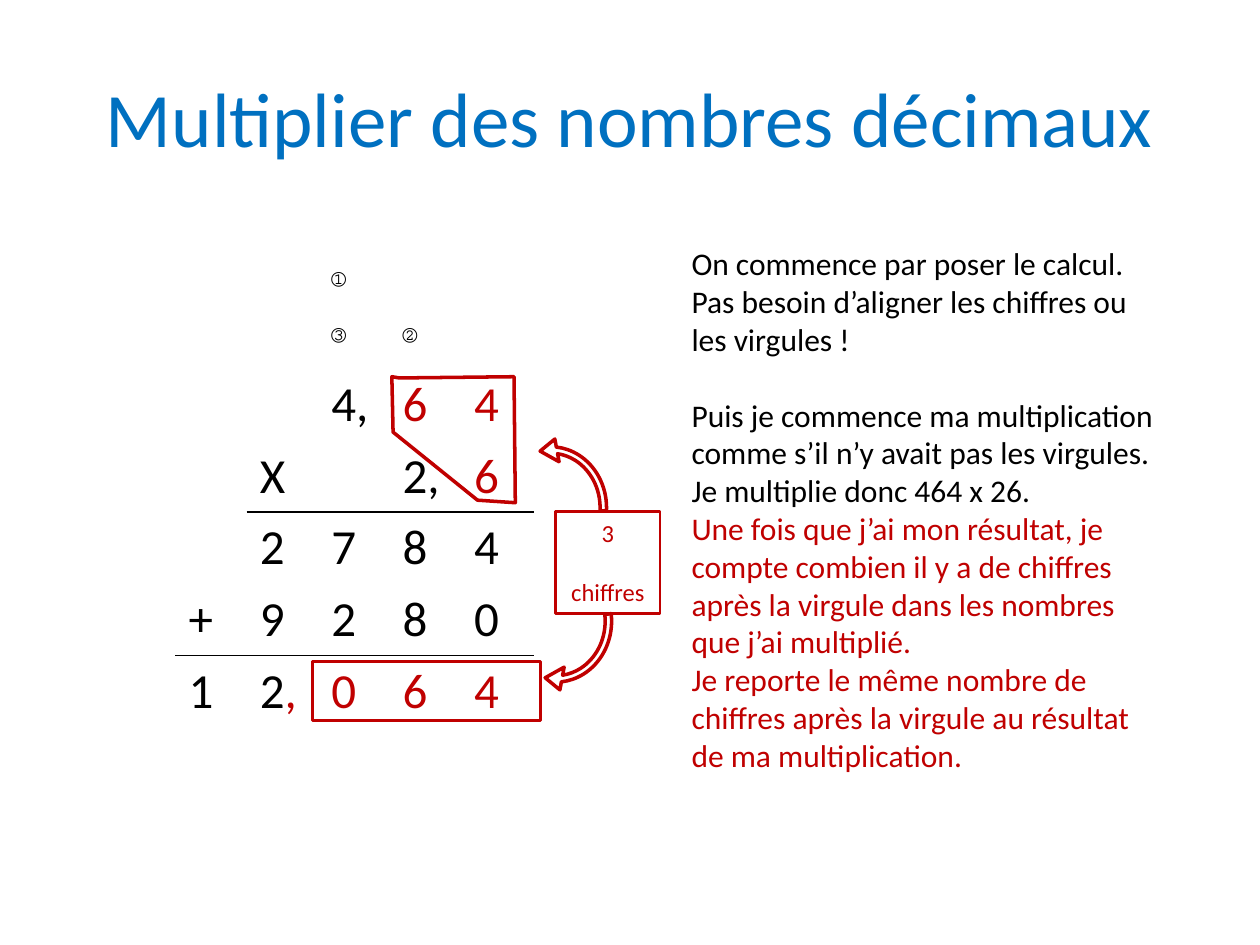
import pptx
import pptx.dml.color
import pptx.enum.shapes
import pptx.enum.text
import pptx.oxml
import pptx.oxml.ns
import pptx.util

Inches = pptx.util.Inches
Pt = pptx.util.Pt
Shape = pptx.enum.shapes.MSO_SHAPE
Align = pptx.enum.text.PP_ALIGN
Anchor = pptx.enum.text.MSO_ANCHOR

BLACK, WHITE, RED, BLUE = "000000", "FFFFFF", "C00000", "0070C0"


def tint(code):
    return pptx.dml.color.RGBColor.from_string(code)


class Deck:
    font = "Calibri"

    def __init__(self):
        self.prs = pptx.Presentation()
        self.prs.slide_width = Inches(10)
        self.prs.slide_height = Inches(7.5)
        self.slide = self.prs.slides.add_slide(self.prs.slide_layouts[5])

    def style(self, run, size, color, font=None):
        run.font.name = font or self.font
        run.font.size = Pt(size)
        run.font.bold = False
        run.font.color.rgb = tint(color)

    def title(self, text):
        box = self.slide.shapes.title
        box.left, box.top = Inches(0.5), Inches(0.3)
        box.width, box.height = Inches(9), Inches(1.25)
        box.text_frame.text = text
        self.style(box.text_frame.paragraphs[0].runs[0], 44, BLUE)

    def fill_text(self, frame, lines, size, align=None):
        """Each line is (text, colour, space before in points)."""
        frame.word_wrap = True
        frame.text = "\n".join(line[0] for line in lines)
        for para, (_, color, gap) in zip(frame.paragraphs, lines):
            para.alignment = align
            para.space_before = Pt(gap)
            self.style(para.runs[0], size, color)

    def text(self, area, lines, size):
        box = self.slide.shapes.add_textbox(*map(Inches, area))
        self.fill_text(box.text_frame, lines, size)

    def outline(self, shape, width=2):
        shape.shadow.inherit = False
        shape.fill.background()
        shape.line.color.rgb = tint(RED)
        shape.line.width = Pt(width)

    def shape(self, kind, area, width=2):
        item = self.slide.shapes.add_shape(kind, *map(Inches, area))
        self.outline(item, width)
        return item

    def arrow(self, area, start, flip=False):
        item = self.shape(Shape.CIRCULAR_ARROW, area)
        for i, val in enumerate((0.05, 10.1, 158.22, start, 0.09)):
            item.adjustments[i] = val
        item.rotation = 180
        if flip:
            item._element.spPr.xfrm.set("flipV", "1")

    def lasso(self, points):
        spots = [(Inches(x), Inches(y)) for x, y in points]
        path = self.slide.shapes.build_freeform(*spots[0])
        path.add_line_segments(spots[1:], close=True)
        self.outline(path.convert_to_shape())

    def rule(self, cell, side):
        cell._tc.get_or_add_tcPr().append(pptx.oxml.parse_xml(
            f'<a:{side} {pptx.oxml.ns.nsdecls("a")} w="12700"><a:solidFill>'
            f'<a:srgbClr val="{BLACK}"/></a:solidFill></a:{side}>'))

    def table(self, area, heights, rows, rules):
        """A bar in a cell splits black text from red; rules maps row to first column."""
        cols = len(rows[0])
        grid = self.slide.shapes.add_table(len(rows), cols, *map(Inches, area)).table
        for col in grid.columns:
            col.width = Inches(area[2] / cols)
        for r, row in enumerate(rows):
            grid.rows[r].height = Inches(heights[r])
            for c, text in enumerate(row):
                cell = grid.cell(r, c)
                if c >= rules.get(r - 1, cols):
                    self.rule(cell, "lnT")
                if c >= rules.get(r, cols):
                    self.rule(cell, "lnB")
                cell.fill.solid()
                cell.fill.fore_color.rgb = tint(WHITE)
                cell.vertical_anchor = Anchor.MIDDLE
                para = cell.text_frame.paragraphs[0]
                if not text:
                    para.font.size = Pt(10)
                black, _, red = text.partition("|")
                for part, color in ((black, BLACK), (red, RED)):
                    if part:
                        run = para.add_run()
                        run.text = part
                        if r < 2:
                            self.style(run, 14, color, "DejaVu Sans Mono")
                        else:
                            self.style(run, 28, color)


def main():
    deck = Deck()
    deck.title("Multiplier des nombres décimaux")

    # Explanation
    deck.text((5.39, 1.89, 3.94, 4.34), [
        ("On commence par poser le calcul.", BLACK, 0),
        ("Pas besoin d’aligner les chiffres ou les virgules !", BLACK, 0),
        ("Puis je commence ma multiplication comme s’il n’y avait pas les virgules.",
         BLACK, 21.6),
        ("Je multiplie donc 464 x 26.", BLACK, 0),
        ("Une fois que j’ai mon résultat, je compte combien il y a de chiffres "
         "après la virgule dans les nombres que j’ai multiplié.", RED, 0),
        ("Je reporte le même nombre de chiffres après la virgule au résultat "
         "de ma multiplication.", RED, 0),
    ], 18)

    # Long multiplication, with carries in the first two rows
    rows = [
        ["", "", "", "①", "", ""],
        ["", "", "", "③", "②", ""],
        ["", "", "", "4,", "|6", "|4"],
        ["", "", "X", "", "2,", "|6"],
        ["", "", "2", "7", "8", "4"],
        ["", "+", "9", "2", "8", "0"],
        ["", "1", "2|,", "|0", "|6", "|4"],
        [""] * 6,
        [""] * 6,
    ]
    deck.table((0.83, 2.02, 3.4, 4.87), [0.31] + [0.57] * 8, rows, {3: 2, 5: 1})

    # Decimal digits in the factors and in the result
    deck.lasso([(3.11, 2.99), (3.12, 3.43), (3.79, 3.97), (4.09, 3.99),
                (4.08, 2.99), (3.17, 3)])
    deck.shape(Shape.RECTANGLE, (2.48, 5.25, 1.81, 0.47))

    # Digit count and its arrows
    count = deck.shape(Shape.RECTANGLE, (4.41, 4.06, 0.83, 0.81), 1.5)
    count.text_frame.vertical_anchor = Anchor.TOP
    deck.fill_text(count.text_frame, [("3", RED, 0), ("chiffres", RED, 16.8)],
                   14, Align.CENTER)
    deck.arrow((3.86, 3.48, 1.02, 1.1), 105.87, flip=True)
    deck.arrow((3.9, 4.38, 1.02, 1.1), 103.34)

    deck.prs.save("out.pptx")


if __name__ == "__main__":
    main()
